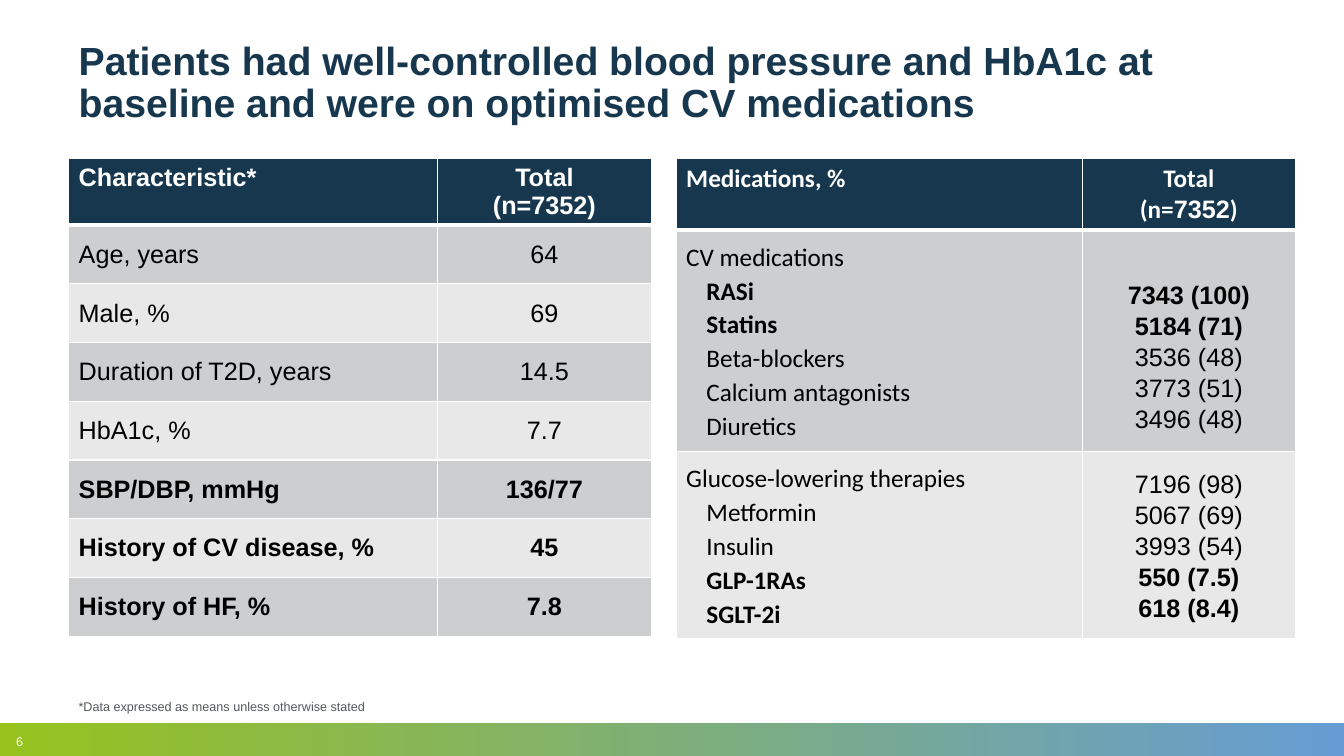
from lxml.etree import SubElement
from pptx import Presentation
from pptx.dml.color import RGBColor
from pptx.enum.shapes import MSO_SHAPE
from pptx.enum.text import MSO_ANCHOR as Anchor, MSO_AUTO_SIZE as AutoSize, PP_ALIGN as Align
from pptx.oxml.ns import qn
from pptx.util import Cm, Pt

NAVY = RGBColor(0x16, 0x37, 0x4D)
WHITE = RGBColor(0xFF, 0xFF, 0xFF)
BLACK = RGBColor(0, 0, 0)
SLATE = RGBColor(0x53, 0x58, 0x5A)
BANDS = RGBColor(0xCC, 0xCE, 0xD0), RGBColor(0xE8, 0xE8, 0xE9)
GREEN = RGBColor(0x97, 0xC2, 0x1E)
BLUE = RGBColor(0x66, 0x9C, 0xD3)
SLIDE_W, SLIDE_H = 33.87, 19.05
LEFT, TABLE_TOP = 1.73, 3.99
INDENT = 0.51


def add_text(frame, text, *, font="Arial", size=18, color=BLACK, bold=False,
             align=Align.LEFT, spacing=1.0, indent=0.0):
    """Add one paragraph; text is a string or a list of (text, font) runs."""
    paragraph = frame.add_paragraph() if frame.text else frame.paragraphs[0]
    paragraph.alignment = align
    paragraph.line_spacing = spacing
    properties = paragraph._p.get_or_add_pPr()
    properties.set("marL", str(Cm(indent)))
    properties.set("indent", "0")
    for words, face in [(text, font)] if isinstance(text, str) else text:
        run = paragraph.add_run()
        run.text = words
        run.font.name, run.font.size, run.font.bold = face, Pt(size), bold
        run.font.color.rgb = color


class BaselineSlide:
    def __init__(self):
        self.deck = Presentation()
        self.deck.slide_width, self.deck.slide_height = Cm(SLIDE_W), Cm(SLIDE_H)
        self.slide = self.deck.slides.add_slide(self.deck.slide_layouts[5])

    def title(self, text, left, top, width, height):
        heading = self.slide.shapes.title
        heading.left, heading.top = Cm(left), Cm(top)
        heading.width, heading.height = Cm(width), Cm(height)
        frame = heading.text_frame
        frame.auto_size, frame.word_wrap = AutoSize.NONE, True
        frame.vertical_anchor = Anchor.TOP
        add_text(frame, text, size=28, color=NAVY, bold=True, spacing=0.9)

    def band(self, left, top, width, height):
        bar = self.slide.shapes.add_shape(
            MSO_SHAPE.RECTANGLE, Cm(left), Cm(top), Cm(width), Cm(height))
        bar.shadow.inherit = False
        bar.line.fill.background()
        bar.fill.gradient()
        bar.fill.gradient_angle = 0
        for stop, color in zip(bar.fill.gradient_stops, (GREEN, BLUE)):
            stop.color.rgb = color

    def note(self, text, left, top, width, height, color, margin=0.25):
        box = self.slide.shapes.add_textbox(Cm(left), Cm(top), Cm(width), Cm(height))
        frame = box.text_frame
        frame.word_wrap = True
        frame.vertical_anchor = Anchor.BOTTOM
        frame.margin_left = Cm(margin)
        add_text(frame, text, size=9, color=color)

    def table(self, left, widths, heights):
        grid = self.slide.shapes.add_table(
            len(heights), len(widths), Cm(left), Cm(TABLE_TOP),
            Cm(sum(widths)), Cm(sum(heights))).table
        for column, width in zip(grid.columns, widths):
            column.width = Cm(width)
        for row, height in zip(grid.rows, heights):
            row.height = Cm(height)
        return grid

    def cell(self, grid, row, column, lines, top_gap=0.0, **style):
        """Fill a cell with (text, overrides) lines; row 0 is the header."""
        cell = grid.cell(row, column)
        header, values = row == 0, column == 1
        cell.vertical_anchor = Anchor.TOP if header else Anchor.MIDDLE
        if values:
            cell.margin_left = cell.margin_right = Cm(0.1)
            cell.margin_top = Cm(0.13 if header else top_gap)
            cell.margin_bottom = Cm(0.13 if header else 0)
        self.borders(cell, header, row == 1)
        cell.fill.solid()
        cell.fill.fore_color.rgb = NAVY if header else BANDS[(row - 1) % 2]
        base = {"color": WHITE if header else BLACK, "bold": header,
                "align": Align.CENTER if values else Align.LEFT, **style}
        for text, overrides in lines:
            add_text(cell.text_frame, text, **{**base, **overrides})

    def borders(self, cell, below_thick, above_thick):
        widths = {"a:lnL": 1, "a:lnR": 1, "a:lnT": 3 if above_thick else 1,
                  "a:lnB": 3 if below_thick else 1}
        for side, width in widths.items():
            edge = SubElement(cell._tc.get_or_add_tcPr(), qn(side), w=str(Pt(width)))
            SubElement(SubElement(edge, qn("a:solidFill")), qn("a:srgbClr"), val=str(WHITE))


def main():
    page = BaselineSlide()
    page.band(0, 18.21, SLIDE_W, SLIDE_H - 18.21)
    page.title("Patients had well-controlled blood pressure and HbA1c at baseline "
               "and were on optimised CV medications", LEFT, 0.91, 30.3, 2.67)

    # Patient characteristics
    characteristics = [
        ("Age, years", "64", False),
        ("Male, %", "69", False),
        ("Duration of T2D, years", "14.5", False),
        ("HbA1c, %", "7.7", False),
        ("SBP/DBP, mmHg", "136/77", True),
        ("History of CV disease, %", "45", True),
        ("History of HF, %", "7.8", True),
    ]
    patients = page.table(LEFT, [9.3, 5.38], [1.63] + [1.48] * len(characteristics))
    page.cell(patients, 0, 0, [("Characteristic*", {})])
    page.cell(patients, 0, 1, [("Total", {}), ("(n=7352)", {})])
    for row, (name, value, bold) in enumerate(characteristics, start=1):
        for column, text in enumerate((name, value)):
            page.cell(patients, row, column, [(text, {"bold": bold})])

    page.note("6", 0.41, 18.36, 1.04, 0.64, WHITE, margin=0)
    page.note("*Data expressed as means unless otherwise stated",
              LEFT, 16.71, 30.3, 1.4, SLATE)

    # Medications: (group, group value, [(drug, value, bold)])
    groups = [
        ("CV medications", None, [
            ("RASi", "7343 (100)", True),
            ("Statins", "5184 (71)", True),
            ("Beta-blockers", "3536 (48)", False),
            ("Calcium antagonists", "3773 (51)", False),
            ("Diuretics", "3496 (48)", False)]),
        ("Glucose-lowering therapies", "7196 (98)", [
            ("Metformin", "5067 (69)", False),
            ("Insulin", "3993 (54)", False),
            ("GLP-1RAs", "550 (7.5)", True),
            ("SGLT-2i", "618 (8.4)", True)]),
    ]
    medications = page.table(17.04, [10.24, 5.36], [1.8, 5.59, 4.72])
    page.cell(medications, 0, 0, [("Medications, %", {})], font="Calibri")
    total = [("(n=", "Calibri"), ("7352", "Arial"), (")", "Calibri")]
    page.cell(medications, 0, 1, [("Total", {}), (total, {})], font="Calibri")
    for row, (group, group_value, drugs) in enumerate(groups, start=1):
        names = [(group, {})]
        names += [(drug, {"bold": bold, "indent": INDENT}) for drug, _, bold in drugs]
        values = [(group_value, {})] if group_value else []
        values += [(value, {"bold": bold}) for _, value, bold in drugs]
        page.cell(medications, row, 0, names, font="Calibri", spacing=1.1)
        page.cell(medications, row, 1, values, spacing=1.1,
                  top_gap=0 if group_value else 0.8)

    page.deck.save("out.pptx")


if __name__ == "__main__":
    main()
